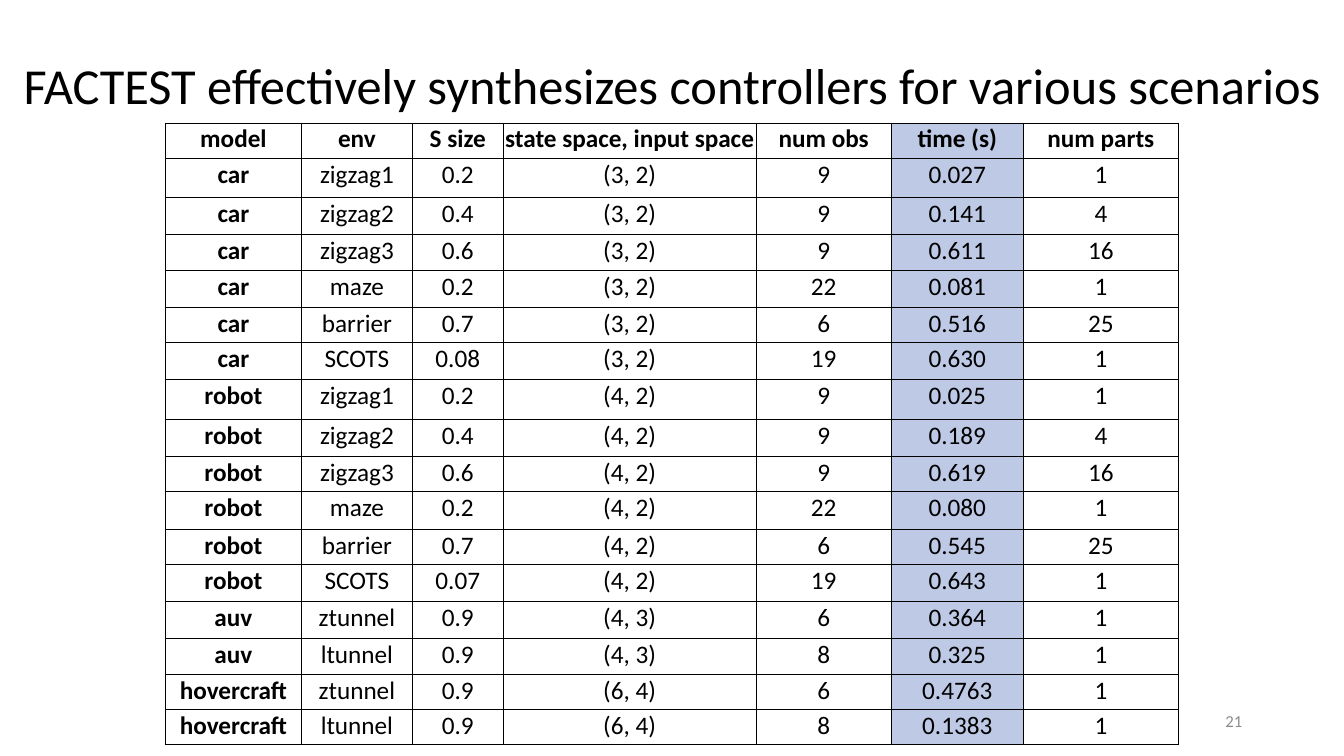
import pptx
import pptx.dml.color
import pptx.enum.text
import pptx.oxml.ns
import pptx.util
from lxml import etree

Inches = pptx.util.Inches
Pt = pptx.util.Pt
RGBColor = pptx.dml.color.RGBColor
ALIGN = pptx.enum.text.PP_ALIGN

BLACK = RGBColor(0x00, 0x00, 0x00)
WHITE = RGBColor(0xFF, 0xFF, 0xFF)
GRAY = RGBColor(0x8C, 0x8C, 0x8C)
HIGHLIGHT = RGBColor(0xBE, 0xC9, 0xE6)

FONT = "Calibri"
SLIDE_WIDTH, SLIDE_HEIGHT = 13.33, 7.5
TABLE_LEFT, TABLE_TOP = 1.64, 1.22
COLUMN_WIDTHS = [1.35, 1.1, 0.9, 2.51, 1.34, 1.31, 1.54]
ROW_HEIGHTS = [0.35, 0.39, 0.37, 0.35, 0.37, 0.35, 0.37, 0.39, 0.37,
               0.35, 0.37, 0.35, 0.37, 0.37, 0.35, 0.35, 0.35]
CELL_MARGIN = 0.01
BORDER_WIDTH = 0.75

HEADER = ["model", "env", "S size", "state space, input space",
          "num obs", "time (s)", "num parts"]
TIME_COLUMN = HEADER.index("time (s)")
RESULTS = [
    ["car", "zigzag1", "0.2", "(3, 2)", "9", "0.027", "1"],
    ["car", "zigzag2", "0.4", "(3, 2)", "9", "0.141", "4"],
    ["car", "zigzag3", "0.6", "(3, 2)", "9", "0.611", "16"],
    ["car", "maze", "0.2", "(3, 2)", "22", "0.081", "1"],
    ["car", "barrier", "0.7", "(3, 2)", "6", "0.516", "25"],
    ["car", "SCOTS", "0.08", "(3, 2)", "19", "0.630", "1"],
    ["robot", "zigzag1", "0.2", "(4, 2)", "9", "0.025", "1"],
    ["robot", "zigzag2", "0.4", "(4, 2)", "9", "0.189", "4"],
    ["robot", "zigzag3", "0.6", "(4, 2)", "9", "0.619", "16"],
    ["robot", "maze", "0.2", "(4, 2)", "22", "0.080", "1"],
    ["robot", "barrier", "0.7", "(4, 2)", "6", "0.545", "25"],
    ["robot", "SCOTS", "0.07", "(4, 2)", "19", "0.643", "1"],
    ["auv", "ztunnel", "0.9", "(4, 3)", "6", "0.364", "1"],
    ["auv", "ltunnel", "0.9", "(4, 3)", "8", "0.325", "1"],
    ["hovercraft", "ztunnel", "0.9", "(6, 4)", "6", "0.4763", "1"],
    ["hovercraft", "ltunnel", "0.9", "(6, 4)", "8", "0.1383", "1"],
]


def write_run(paragraph, text, size, color=BLACK, bold=False, align=ALIGN.CENTER):
    paragraph.alignment = align
    run = paragraph.add_run()
    run.text = text
    run.font.name = FONT
    run.font.size = Pt(size)
    run.font.bold = bold
    run.font.color.rgb = color


def add_label(slide, box, text, size, color, align):
    """Add a vertically centred text box and return its paragraph."""
    frame = slide.shapes.add_textbox(*map(Inches, box)).text_frame
    frame.word_wrap = True
    frame.vertical_anchor = pptx.enum.text.MSO_ANCHOR.MIDDLE
    paragraph = frame.paragraphs[0]
    write_run(paragraph, text, size, color, align=align)
    return paragraph


def add_borders(cell):
    qualified = pptx.oxml.ns.qn
    properties = cell._tc.get_or_add_tcPr()
    for side in ("a:lnL", "a:lnR", "a:lnT", "a:lnB"):
        line = etree.SubElement(properties, qualified(side), w=str(Pt(BORDER_WIDTH)))
        fill = etree.SubElement(line, qualified("a:solidFill"))
        etree.SubElement(fill, qualified("a:srgbClr"), val=str(BLACK))


def fill_cell(cell, text, color, bold):
    cell.margin_left = cell.margin_right = Inches(CELL_MARGIN)
    cell.margin_top = cell.margin_bottom = Inches(CELL_MARGIN)
    add_borders(cell)
    cell.fill.solid()
    cell.fill.fore_color.rgb = color
    write_run(cell.text_frame.paragraphs[0], text, 18, bold=bold)


def add_results_table(slide):
    rows = [HEADER] + RESULTS
    box = (TABLE_LEFT, TABLE_TOP, sum(COLUMN_WIDTHS), sum(ROW_HEIGHTS))
    table = slide.shapes.add_table(len(rows), len(HEADER), *map(Inches, box)).table
    table.horz_banding = False
    for column, width in zip(table.columns, COLUMN_WIDTHS):
        column.width = Inches(width)
    for row, height in zip(table.rows, ROW_HEIGHTS):
        row.height = Inches(height)
    for row_index, row in enumerate(rows):
        for column_index, text in enumerate(row):
            color = HIGHLIGHT if column_index == TIME_COLUMN else WHITE
            bold = row_index == 0 or column_index == 0
            fill_cell(table.cell(row_index, column_index), text, color, bold)


def main():
    presentation = pptx.Presentation()
    presentation.slide_width = Inches(SLIDE_WIDTH)
    presentation.slide_height = Inches(SLIDE_HEIGHT)
    slide = presentation.slides.add_slide(presentation.slide_layouts[6])
    title = add_label(slide, (0.08, 0.15, 13.18, 1.45),
                      "FACTEST effectively synthesizes controllers for various scenarios",
                      36, BLACK, ALIGN.CENTER)
    title.line_spacing = 0.9
    add_label(slide, (9.42, 6.95, 3, 0.4), "21", 12, GRAY, ALIGN.RIGHT)
    add_results_table(slide)
    presentation.save("out.pptx")


if __name__ == "__main__":
    main()
